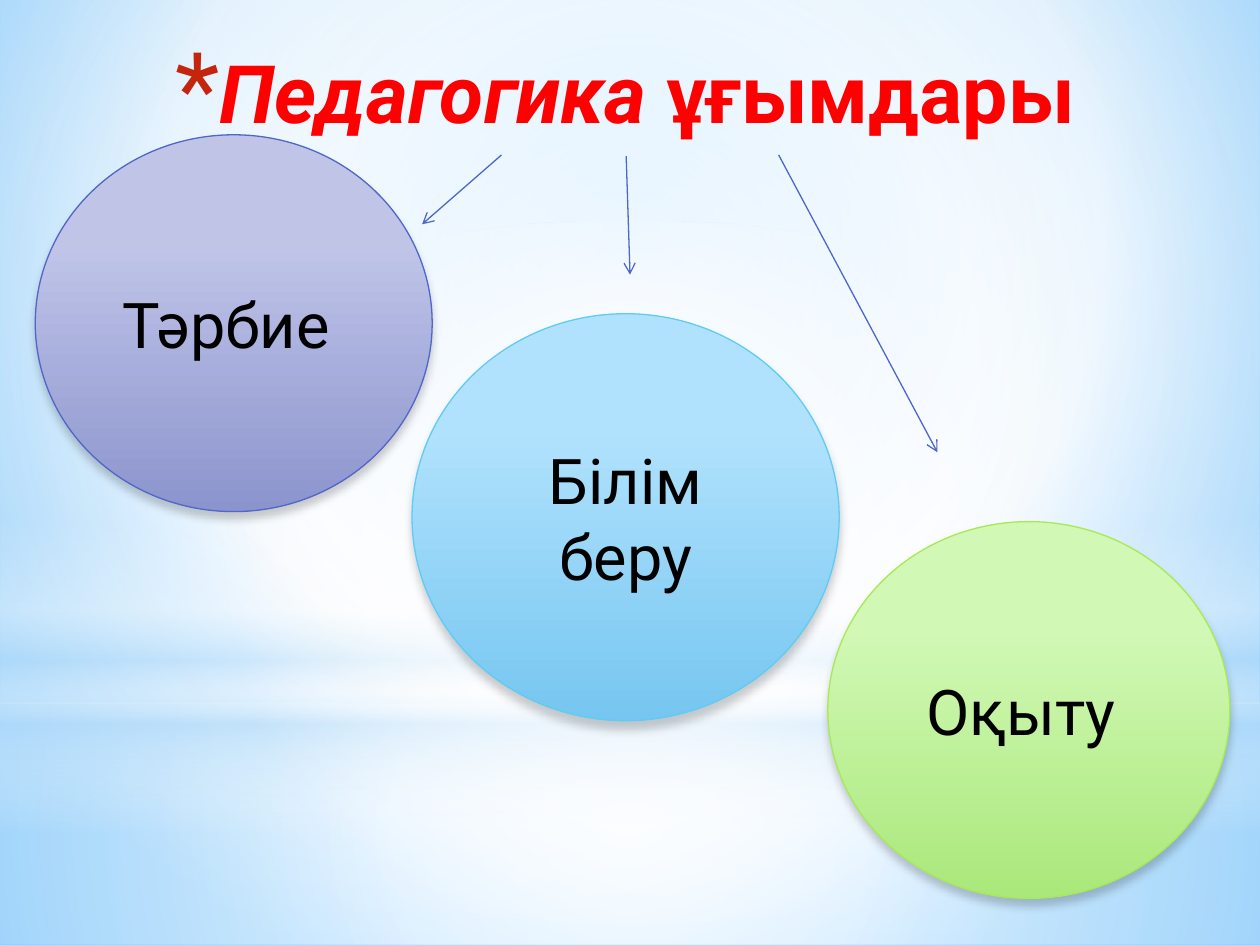
from lxml import etree
from pptx import Presentation
from pptx.dml.color import RGBColor
from pptx.enum import shapes, text
from pptx.oxml.ns import qn
from pptx.util import Inches, Pt

RED = RGBColor(0xFF, 0x00, 0x00)
BLACK = RGBColor(0x00, 0x00, 0x00)
INDIGO = RGBColor(0x4E, 0x67, 0xC8)
CYAN = RGBColor(0x5E, 0xCC, 0xF3)
LIME = RGBColor(0xA7, 0xEA, 0x52)
FONT = "Roboto"
MID = (50, 50, 50, 50)


def add(node, tag, **vals):
    return etree.SubElement(node, qn(tag), {k: str(v) for k, v in vals.items()})


def blend(fill, root, stops, focus=None):
    """Fill with (position, colour, opacity) stops: round if focus is given, else downward."""
    fill.gradient()
    grad = root.find(".//" + qn("a:gradFill"))
    for kid in list(grad):
        grad.remove(kid)
    row = add(grad, "a:gsLst")
    for pos, tint, alpha in stops:
        stop = add(row, "a:gs", pos=pos * 1000)
        hue = add(stop, "a:srgbClr", val=tint)
        if alpha < 100:
            add(hue, "a:alpha", val=alpha * 1000)
    if focus:
        way = add(grad, "a:path", path="circle")
        add(way, "a:fillToRect", **{k: v * 1000 for k, v in zip("ltrb", focus)})
    else:
        add(grad, "a:lin", ang=90 * 60000, scaled=0)


deck = Presentation()
deck.slide_width, deck.slide_height = Inches(10), Inches(7.5)
slide = deck.slides.add_slide(deck.slide_layouts[5])
blend(slide.background.fill, slide.element,
      [(0, "9ED5FF", 100), (60, "FFFFFF", 100), (100, "5BB9FF", 100)], (20, 10, 20, 60))

# Soft light behind the content
RECT, OVAL = shapes.MSO_SHAPE.RECTANGLE, shapes.MSO_SHAPE.OVAL
glows = [
    (RECT, 5.58, 1.92, MID, [(0, "FFFFFF", 91), (37, "FFFFFF", 76), (100, "B4DCFA", 79)]),
    (RECT, 0, 5.58, MID, [(0, "FFFFFF", 89), (48, "FFFFFF", 62), (100, "B4DCFA", 79)]),
    (RECT, 4.12, 2.5, None, [(0, "FFFFFF", 0), (29, "FFFFFF", 30), (45, "B4DCFA", 40),
                             (55, "FFFFFF", 26), (65, "B4DCFA", 60), (100, "FFFFFF", 0)]),
    (OVAL, 1.75, 5.58, MID, [(0, "FFFFFF", 100), (56, "FFFFFF", 0)]),
]
for kind, top, high, focus, stops in glows:
    glow = slide.shapes.add_shape(kind, 0, Inches(top), Inches(10), Inches(high))
    glow.shadow.inherit = False
    glow.line.fill.background()
    blend(glow.fill, glow.element.spPr, stops, focus)

# Title, moved in front of the light
title = slide.shapes.title
slide.shapes.element.append(title.element)
title.left, title.top = Inches(0.35), Inches(0.21)
title.width, title.height = Inches(9.22), Inches(1.03)
frame = title.text_frame
frame.auto_size = text.MSO_AUTO_SIZE.NONE
frame.vertical_anchor = text.MSO_ANCHOR.MIDDLE
para = frame.paragraphs[0]
para.alignment = text.PP_ALIGN.CENTER
for words, slant in (("Педагогика ", True), ("ұғымдары", False)):
    run = para.add_run()
    run.text = words
    style = {"name": FONT, "size": Pt(46), "bold": True, "italic": slant}
    for key, val in style.items():
        setattr(run.font, key, val)
    run.font.color.rgb = RED
props = para._p.get_or_add_pPr()
props.set("marL", str(Inches(0.35)))
props.set("indent", str(Inches(-0.35)))
add(add(props, "a:buClr"), "a:srgbClr", val="C3260C")
add(props, "a:buSzPct", val=128000)
add(props, "a:buFont", typeface=FONT)
add(props, "a:buChar", char="*")

# Three concepts
discs = [
    ("Тәрбие ", (0.28, 1.07, 3.15, 2.99), "C0C5E8", "8C94CE", INDIGO),
    ("Білім беру", (3.27, 2.49, 3.39, 3.23), "B1E2FD", "76C6F1", CYAN),
    ("Оқыту ", (6.57, 4.14, 3.19, 2.99), "D1F8B5", "AAE87B", LIME),
]
for words, box, light, dark, edge in discs:
    disc = slide.shapes.add_shape(OVAL, *map(Inches, box))
    blend(disc.fill, disc.element.spPr, [(28, light, 100), (100, dark, 100)])
    disc.line.color.rgb = edge
    disc.line.width = Pt(0.75)
    disc.shadow.inherit = False
    shade = add(disc.element.spPr.find(qn("a:effectLst")), "a:outerShdw", blurRad=Pt(5),
                dist=Pt(4), dir=90 * 60000, rotWithShape=0)
    add(add(shade, "a:srgbClr", val="000000"), "a:alpha", val=20000)
    frame = disc.text_frame
    frame.word_wrap = True
    frame.vertical_anchor = text.MSO_ANCHOR.MIDDLE
    para = frame.paragraphs[0]
    para.alignment = text.PP_ALIGN.CENTER
    run = para.add_run()
    run.text = words
    run.font.name, run.font.size = FONT, Pt(36)
    run.font.color.rgb = BLACK

# Arrows from the title to the concepts
for ends in ((3.98, 1.23, 3.35, 1.78), (4.97, 1.24, 5, 2.18), (6.18, 1.23, 7.44, 3.59)):
    arrow = slide.shapes.add_connector(shapes.MSO_CONNECTOR.STRAIGHT, *map(Inches, ends))
    arrow.line.color.rgb = INDIGO
    arrow.line.width = Pt(0.75)
    add(arrow.line._get_or_add_ln(), "a:tailEnd", type="arrow")
    add(arrow.element.spPr, "a:effectLst")

deck.save("out.pptx")
